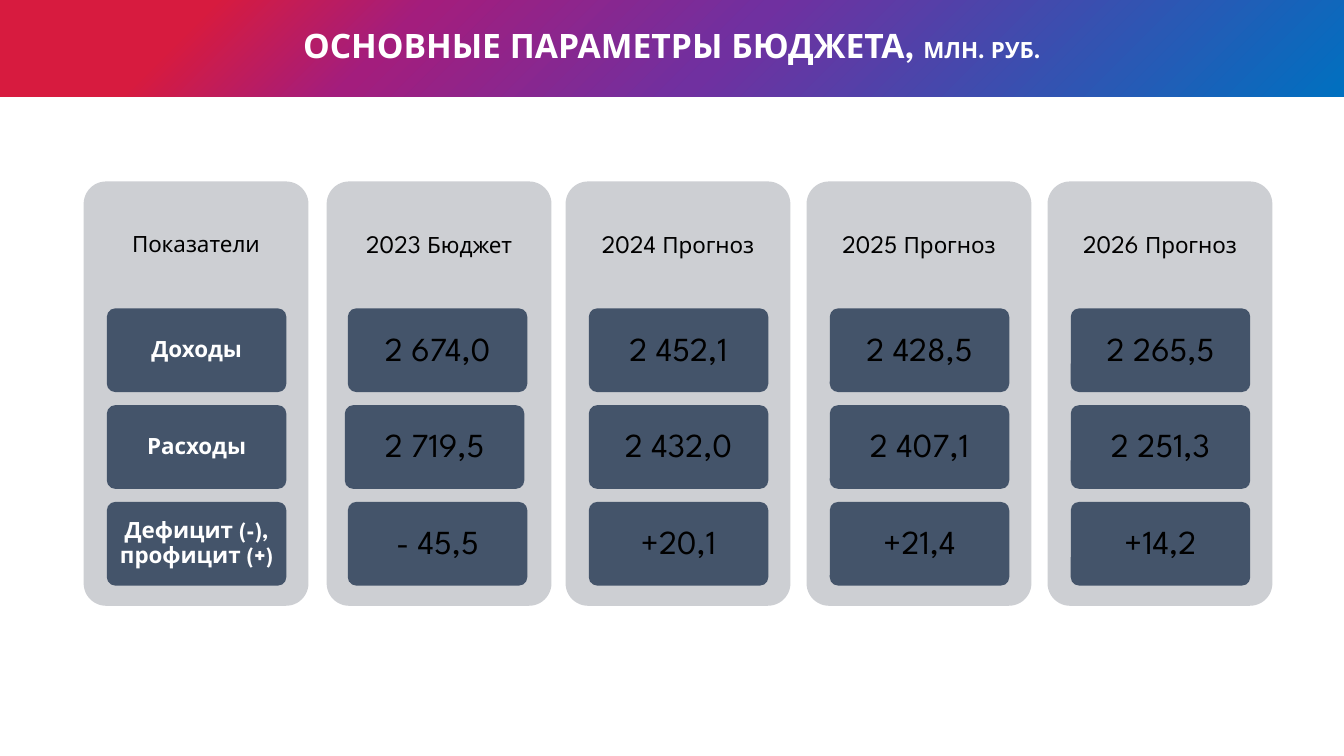
from pptx import Presentation
from pptx.dml.color import RGBColor
from pptx.enum.shapes import MSO_SHAPE
from pptx.enum.text import MSO_ANCHOR, MSO_AUTO_SIZE, PP_ALIGN
from pptx.oxml import parse_xml
from pptx.oxml.ns import nsdecls
from pptx.util import Inches, Pt

ROUNDED = MSO_SHAPE.ROUNDED_RECTANGLE
MIDDLE = MSO_ANCHOR.MIDDLE
CENTER = PP_ALIGN.CENTER
NO_AUTOFIT = MSO_AUTO_SIZE.NONE
TITLE_ONLY = 5

# Budget figures: year, kind, income, spending, balance
ROW_LABELS = ["Доходы", "Расходы", "Дефицит (-), профицит (+)"]
YEARS = [
    ("2023", "Бюджет", ["2 674,0", "2 719,5", "- 45,5"]),
    ("2024", "Прогноз", ["2 452,1", "2 432,0", "+20,1"]),
    ("2025", "Прогноз", ["2 428,5", "2 407,1", "+21,4"]),
    ("2026", "Прогноз", ["2 265,5", "2 251,3", "+14,2"]),
]
HEADER_STOPS = [(0, "0070C0"), (46, "7030A0"), (70, "A31D7D"),
                (85, "D71B3F"), (100, "D71B3F")]

# Column grid, in inches
CARD_LEFT, CARD_TOP, CARD_WIDTH, CARD_HEIGHT = 0.83, 1.8, 2.23, 4.21
HEADING_HEIGHT = 1.26
COLUMN_STEP = 2.39
TILE_LEFT, TILE_TOP, TILE_WIDTH, TILE_HEIGHT = 1.06, 3.06, 1.78, 0.83
ROW_STEP = 0.96
CARD_SHIFTS = {1: 0.02}
TILE_SHIFTS = {(1, 1): -0.03}


def color(value):
    return RGBColor.from_string(value)


class BudgetSlide:
    font = "League Spartan"
    white, black = "FFFFFF", "000000"
    card_fill, tile_fill = "CDCFD3", "44546A"

    def __init__(self, presentation):
        layout = presentation.slide_layouts[TITLE_ONLY]
        self.slide = presentation.slides.add_slide(layout)

    def set_text(self, shape, runs, text_color, bold=False, insets=(0.1, 0.05)):
        """Fill a shape with one centred paragraph of (text, size) runs."""
        frame = shape.text_frame
        side, end = (Inches(inset) for inset in insets)
        frame_format = {
            "auto_size": NO_AUTOFIT, "word_wrap": True, "vertical_anchor": MIDDLE,
            "margin_left": side, "margin_right": side,
            "margin_top": end, "margin_bottom": end,
        }
        for name, value in frame_format.items():
            setattr(frame, name, value)
        paragraph = frame.paragraphs[0]
        paragraph.alignment = CENTER
        paragraph.line_spacing = 0.9
        for text, size in runs:
            run = paragraph.add_run()
            run.text = text
            font_format = {"name": self.font, "size": Pt(size), "bold": bold}
            for name, value in font_format.items():
                setattr(run.font, name, value)
            run.font.color.rgb = color(text_color)

    def title(self, runs, left, top, width, height):
        title = self.slide.shapes.title
        box = {"left": left, "top": top, "width": width, "height": height}
        for name, value in box.items():
            setattr(title, name, Inches(value))
        stops = "".join(
            f'<a:gs pos="{position * 1000}"><a:srgbClr val="{value}"/></a:gs>'
            for position, value in HEADER_STOPS)
        title.element.spPr.append(parse_xml(
            f'<a:gradFill {nsdecls("a")} rotWithShape="1"><a:gsLst>{stops}</a:gsLst>'
            '<a:path path="circle"><a:fillToRect l="100000" t="100000"/></a:path>'
            '</a:gradFill>'))
        self.set_text(title, runs, self.white, bold=True)

    def rounded_box(self, fill, *box):
        shape = self.slide.shapes.add_shape(ROUNDED, *map(Inches, box))
        shape.adjustments[0] = 0.1
        shape.shadow.inherit = False
        shape.fill.solid()
        shape.fill.fore_color.rgb = color(fill)
        shape.line.fill.background()
        return shape

    def card(self, column, heading):
        left = CARD_LEFT + column * COLUMN_STEP + CARD_SHIFTS.get(column, 0)
        self.rounded_box(self.card_fill, left, CARD_TOP, CARD_WIDTH, CARD_HEIGHT)
        box = (left, CARD_TOP, CARD_WIDTH, HEADING_HEIGHT)
        heading_box = self.slide.shapes.add_textbox(*map(Inches, box))
        self.set_text(heading_box, heading, self.black, insets=(0.07, 0.07))

    def tile(self, column, row, text, is_label):
        left = TILE_LEFT + column * COLUMN_STEP + TILE_SHIFTS.get((column, row), 0)
        top = TILE_TOP + row * ROW_STEP
        tile = self.rounded_box(self.tile_fill, left, top, TILE_WIDTH, TILE_HEIGHT)
        if is_label:
            self.set_text(tile, [(text, 16)], self.white, True, (0.04, 0.03))
        else:
            self.set_text(tile, [(text, 24)], self.black, False, (0.07, 0.05))


def main():
    presentation = Presentation()
    presentation.slide_width = Inches(13.33)
    presentation.slide_height = Inches(7.5)
    budget = BudgetSlide(presentation)

    # Header band
    budget.title([("ОСНОВНЫЕ ПАРАМЕТРЫ БЮДЖЕТА, ", 24), ("МЛН. РУБ.", 16)],
                 0, -0.01, 13.33, 0.97)

    # Label column, then one column per year
    columns = [([("Показатели", 16)], ROW_LABELS)]
    columns += [([(f"{year} ", 18), (kind, 16)], values)
                for year, kind, values in YEARS]
    for column, (heading, texts) in enumerate(columns):
        budget.card(column, heading)
        for row, text in enumerate(texts):
            budget.tile(column, row, text, is_label=column == 0)

    presentation.save("out.pptx")


if __name__ == "__main__":
    main()
